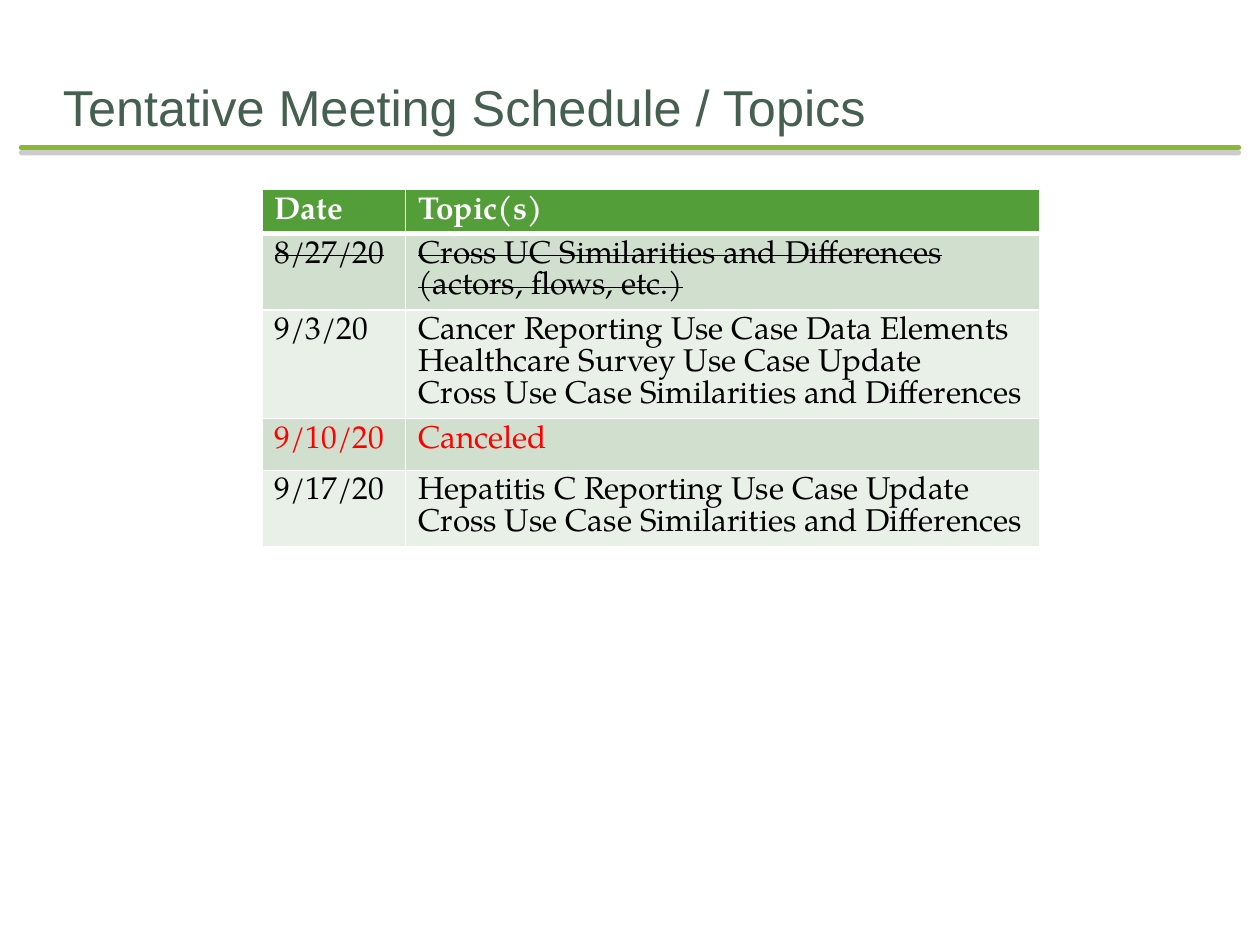
from lxml import etree
from pptx import Presentation
from pptx import util as u
from pptx.dml import color
from pptx.enum import shapes, text
from pptx.oxml import ns, parse_xml

COLORS = {
    "title": "455F51", "rule": "8AB833", "shadow": "808080",
    "header": "549E39", "odd": "D1DFCE", "even": "E9F0E8",
    "white": "FFFFFF", "black": "000000", "canceled": "FF0000",
}
TITLE = {"name": "Arial", "size": u.Pt(28.8)}
BODY = {"name": "TeX Gyre Pagella", "size": u.Pt(18), "bold": False}
HEADER = {**BODY, "bold": True}
DRAWING = ns.nsdecls("a")

SCHEDULE = [
    ("Date", ["Topic(s)"], 0.34),
    ("8/27/20", ["Cross UC Similarities and Differences (actors, flows, etc.)"], 0.6),
    ("9/3/20", ["Cancer Reporting Use Case Data Elements",
                "Healthcare Survey Use Case Update",
                "Cross Use Case Similarities and Differences"], 0.86),
    ("9/10/20", ["Canceled"], 0.41),
    ("9/17/20", ["Hepatitis C Reporting Use Case Update",
                 "Cross Use Case Similarities and Differences"], 0.6),
]


class Deck:
    def __init__(self, width, height):
        self.prs = Presentation()
        self.width = self.prs.slide_width = u.Inches(width)
        self.height = self.prs.slide_height = u.Inches(height)
        self.slide = self.prs.slides.add_slide(self.prs.slide_layouts[6])

    def x(self, share):
        return round(self.width * share)

    def y(self, share):
        return round(self.height * share)

    def add_words(self, paragraph, words, style, ink, struck=False):
        run = paragraph.add_run()
        run.text = words
        for key, value in style.items():
            setattr(run.font, key, value)
        run.font.color.rgb = color.RGBColor.from_string(COLORS[ink])
        if struck:
            run.font._element.set("strike", "sngStrike")

    def title(self, words, left, top, width, height):
        box = self.slide.shapes.add_textbox(
            self.x(left), self.y(top), self.x(width), self.y(height))
        layout = {"word_wrap": True, "vertical_anchor": text.MSO_ANCHOR.BOTTOM,
                  "margin_left": 0, "margin_right": 0, "margin_bottom": 0}
        for key, value in layout.items():
            setattr(box.text_frame, key, value)
        self.add_words(box.text_frame.paragraphs[0], words, TITLE, "title")

    def rule(self, left, right, top):
        line = self.slide.shapes.add_connector(
            shapes.MSO_CONNECTOR.STRAIGHT,
            self.x(left), self.y(top), self.x(right), self.y(top))
        line.line.width = u.Pt(3)
        line.line.color.rgb = color.RGBColor.from_string(COLORS["rule"])
        line.line._get_or_add_ln().set("cap", "rnd")
        line._element.spPr.append(parse_xml(
            f'<a:effectLst {DRAWING}><a:outerShdw blurRad="0" dist="{u.Pt(3)}" '
            f'dir="5400000" rotWithShape="0"><a:srgbClr val="{COLORS["shadow"]}">'
            '<a:alpha val="40000"/></a:srgbClr></a:outerShdw></a:effectLst>'))

    def borders(self, cell, widths):
        props = cell._tc.get_or_add_tcPr()
        for index, (side, points) in enumerate(widths.items()):
            props.insert(index, etree.fromstring(
                f'<a:ln{side} {DRAWING} w="{u.Pt(points)}"><a:solidFill>'
                f'<a:srgbClr val="{COLORS["white"]}"/></a:solidFill></a:ln{side}>'))

    def cell(self, cell, lines, style, ink, fill, struck, widths):
        cell.fill.solid()
        cell.fill.fore_color.rgb = color.RGBColor.from_string(COLORS[fill])
        self.borders(cell, widths)
        for index, words in enumerate(lines):
            frame = cell.text_frame
            paragraph = frame.add_paragraph() if index else frame.paragraphs[0]
            paragraph.line_spacing = u.Pt(18.25)
            self.add_words(paragraph, words, style, ink, struck)

    def schedule(self, entries, left, top, columns):
        heights = [u.Inches(height) for _, _, height in entries]
        table = self.slide.shapes.add_table(
            len(entries), len(columns), self.x(left), self.y(top),
            self.x(sum(columns)), sum(heights)).table
        for column, share in zip(table.columns, columns):
            column.width = self.x(share)
        for index, (date, topics, _) in enumerate(entries):
            table.rows[index].height = heights[index]
            style, ink = (BODY, "black") if index else (HEADER, "white")
            if topics == ["Canceled"]:
                ink = "canceled"
            fill = ("odd" if index % 2 else "even") if index else "header"
            widths = {"L": 1, "R": 1, "T": 3 if index == 1 else 1,
                      "B": 1 if index else 3}
            for place, lines in enumerate(([date], topics)):
                self.cell(table.cell(index, place), lines, style, ink, fill,
                          date == "8/27/20", widths)


def main():
    deck = Deck(10, 7.5)
    deck.rule(0.017, 0.983, 0.156)
    deck.title("Tentative Meeting Schedule / Topics", 0.05, 0.067, 0.9, 0.077)
    deck.schedule(SCHEDULE, 0.208, 0.2, (0.114, 0.503))
    deck.prs.save("out.pptx")


if __name__ == "__main__":
    main()
